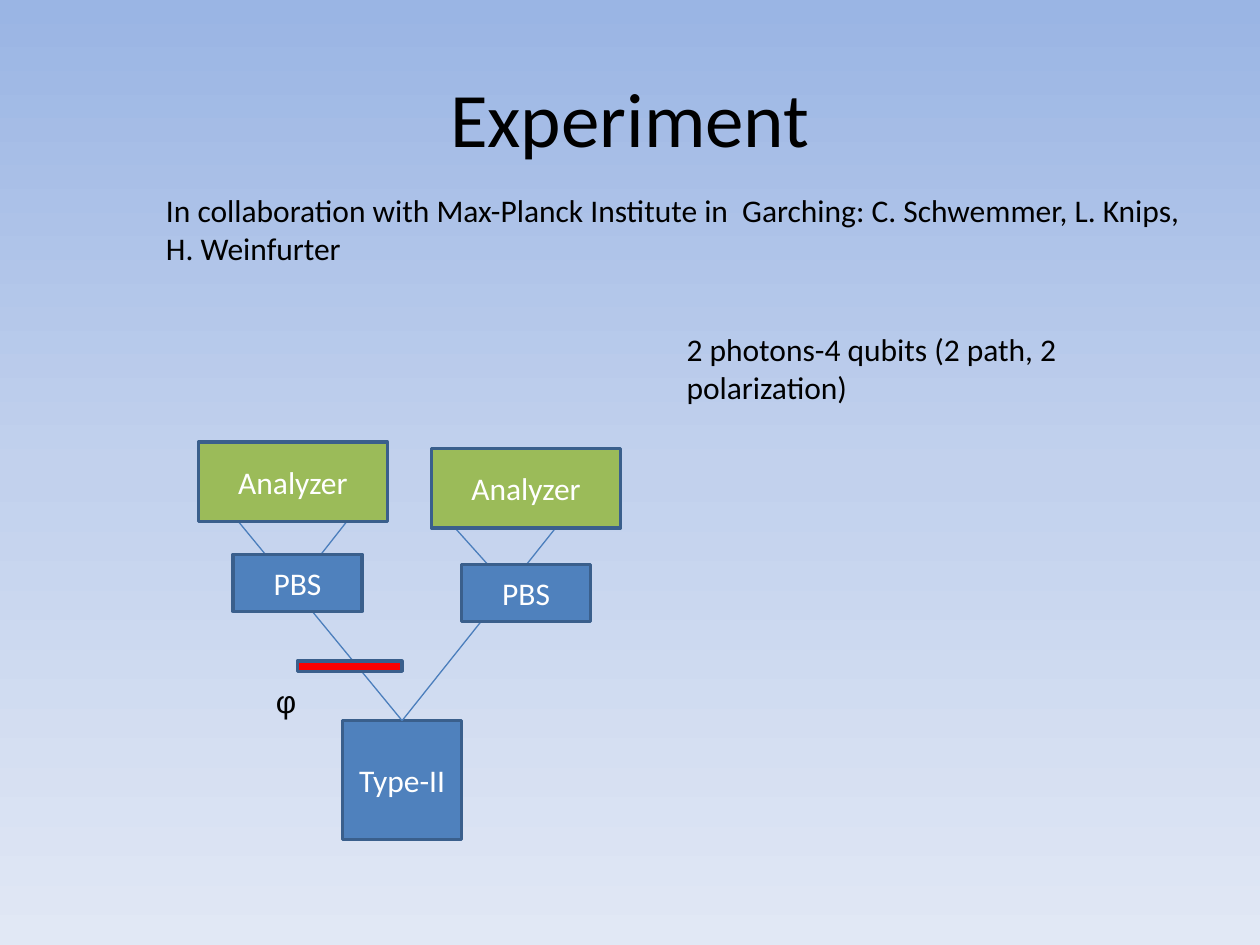
"""Build the experiment slide with its two-photon optical setup."""
import copy

import pptx
import pptx.dml.color
import pptx.enum.shapes
import pptx.enum.text
import pptx.oxml.ns
import pptx.util
from lxml import etree

COLORS = {
    "sky": "9AB5E4", "mist": "C2D1ED", "haze": "E1E8F5",
    "blue": "4F81BD", "green": "9BBB59", "red": "FF0000",
    "border": "3A5F8C", "beam": "4B7EBC", "black": "000000", "white": "FFFFFF",
}


def color(name):
    """Return the named colour."""
    return pptx.dml.color.RGBColor.from_string(COLORS[name])


def points(values):
    """Turn numbers into lengths in points."""
    return [pptx.util.Pt(value) for value in values]


def add_run(paragraph, text, color_name, size=18, font="Calibri"):
    """Add one formatted run to a paragraph."""
    run = paragraph.add_run()
    run.text = text
    run.font.size = pptx.util.Pt(size)
    run.font.name = font
    run.font.color.rgb = color(color_name)


def set_background(slide):
    """Fill the background with a vertical three-colour gradient."""
    fill = slide.background.fill
    fill.gradient()
    fill.gradient_angle = 270
    stop_list = slide.element.xpath(".//p:bg//a:gsLst")[0]
    stop_list.append(copy.deepcopy(stop_list[-1]))
    for stop, name, position in zip(fill.gradient_stops, ("sky", "mist", "haze"), (0, 0.5, 1)):
        stop.color.rgb = color(name)
        stop.position = position


def set_title(slide, text, box):
    """Place and fill the title placeholder."""
    title = slide.shapes.title
    title.left, title.top, title.width, title.height = points(box)
    frame = title.text_frame
    frame.vertical_anchor = pptx.enum.text.MSO_ANCHOR.MIDDLE
    frame.paragraphs[0].alignment = pptx.enum.text.PP_ALIGN.CENTER
    add_run(frame.paragraphs[0], text, "black", size=44)


def add_text(slide, text, box, font="Calibri"):
    """Add a wrapping text box that fits its text."""
    frame = slide.shapes.add_textbox(*points(box)).text_frame
    frame.word_wrap = True
    frame.auto_size = pptx.enum.text.MSO_AUTO_SIZE.SHAPE_TO_FIT_TEXT
    add_run(frame.paragraphs[0], text, "black", font=font)


def add_block(slide, box, fill_name, text=""):
    """Add an outlined rectangle with an optional centred label."""
    shape = slide.shapes.add_shape(pptx.enum.shapes.MSO_SHAPE.RECTANGLE, *points(box))
    shape.shadow.inherit = False
    shape.fill.solid()
    shape.fill.fore_color.rgb = color(fill_name)
    shape.line.color.rgb = color("border")
    shape.line.width = pptx.util.Pt(2)
    if text:
        frame = shape.text_frame
        frame.vertical_anchor = pptx.enum.text.MSO_ANCHOR.MIDDLE
        frame.paragraphs[0].alignment = pptx.enum.text.PP_ALIGN.CENTER
        add_run(frame.paragraphs[0], text, "white")
    return shape


def add_beam(slide, start, end):
    """Add a thin straight light beam."""
    beam = slide.shapes.add_connector(
        pptx.enum.shapes.MSO_CONNECTOR.STRAIGHT, *points(start + end))
    beam.line.color.rgb = color("beam")
    beam.line.width = pptx.util.Pt(0.75)
    etree.SubElement(beam.element.spPr, pptx.oxml.ns.qn("a:effectLst"))
    return beam


def main():
    """Build and save the slide."""
    presentation = pptx.Presentation()
    presentation.slide_width, presentation.slide_height = points((720, 540))
    slide = presentation.slides.add_slide(presentation.slide_layouts[5])
    set_background(slide)
    set_title(slide, "Experiment", (36, 21.6, 648, 90))
    add_text(slide, "In collaboration with Max-Planck Institute in  Garching: "
             "C. Schwemmer, L. Knips, H. Weinfurter", (87.8, 105.8, 595.4, 51))

    crystal = add_block(slide, (195.8, 411.8, 68, 68), "blue", "Type-II")
    for end in ((127.4, 287.3), (320.4, 298.1)):
        add_beam(slide, (229.8, 411.8), end).begin_connect(crystal, 0)
    add_beam(slide, (292.3, 337.7), (254.2, 295.2))
    add_beam(slide, (167, 337.7), (206.6, 287.3))

    for left, top in ((133.2, 316.8), (263.8, 322.6)):
        add_block(slide, (left, top, 73.7, 32.6), "blue", "PBS")
    add_block(slide, (169.9, 377.8, 59.8, 5.8), "red")
    add_text(slide, "φ", (150.5, 385.9, 51, 29), font="Arial")
    for left, top in ((113.4, 252.7), (246.6, 256.3)):
        add_block(slide, (left, top, 108, 45.4), "green", "Analyzer")

    add_text(slide, "2 photons-4 qubits (2 path, 2 polarization)", (385.2, 185, 286.6, 51))
    presentation.save("out.pptx")


if __name__ == "__main__":
    main()
